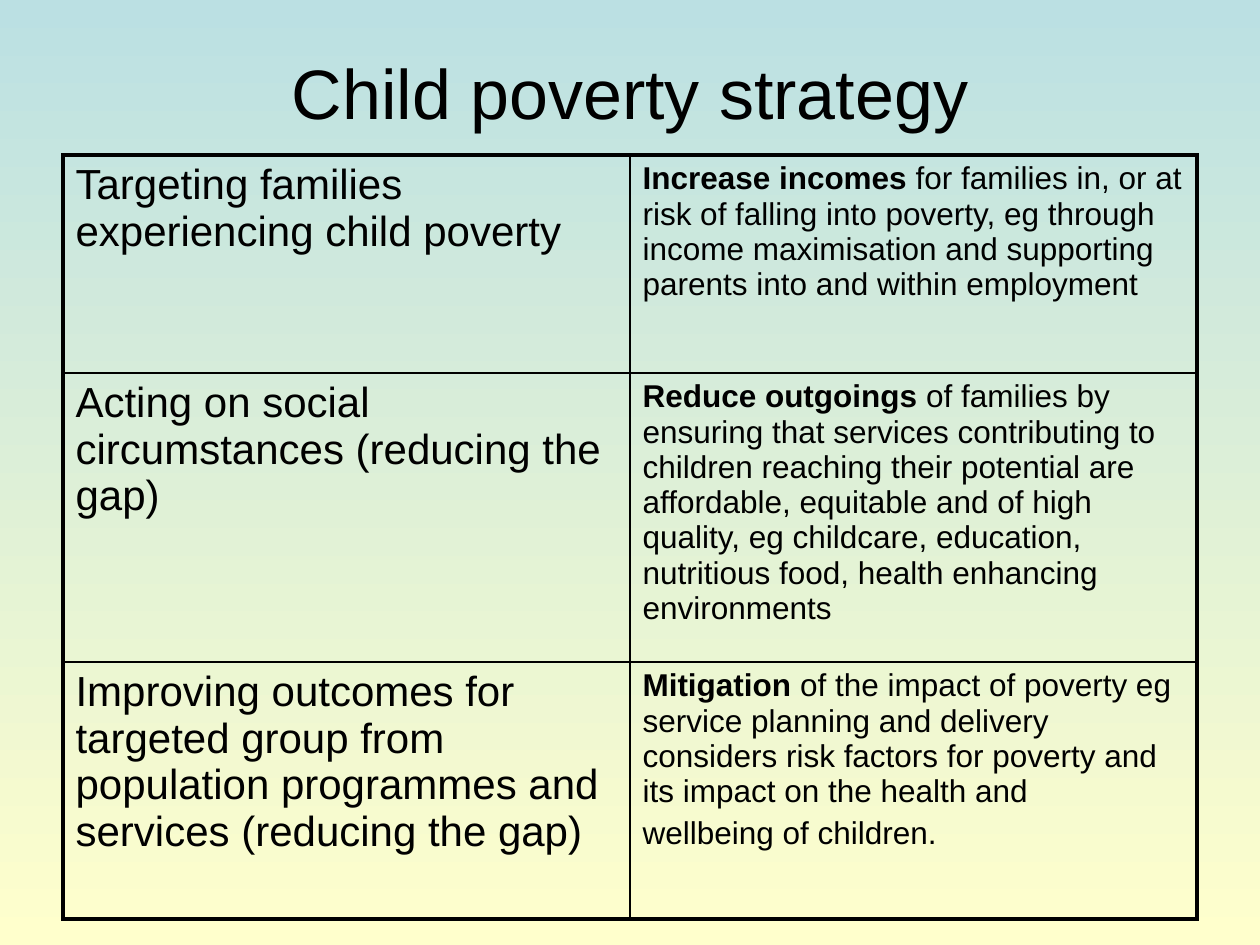
from dataclasses import dataclass

from lxml import etree
from pptx import Presentation
from pptx.dml.color import RGBColor
from pptx.enum.text import MSO_ANCHOR, PP_ALIGN
from pptx.oxml.ns import qn
from pptx.util import Emu, Pt

CENTER, LEFT, MIDDLE = PP_ALIGN.CENTER, PP_ALIGN.LEFT, MSO_ANCHOR.MIDDLE
PX_PER_INCH = 126
BLANK_LAYOUT = 6


@dataclass(frozen=True)
class Theme:
    font: str = "Arial"
    ink: str = "000000"
    sky: str = "BBE0E3"
    cream: str = "FFFFCC"
    title_size: int = 40
    aim_size: int = 24
    action_size: int = 18
    outer_line: float = 2.25
    inner_line: float = 1
    paragraph_gap: float = 0.2


THEME = Theme()
ROW_HEIGHTS = [218, 289, 257]
STRATEGY = [
    (
        "Targeting families experiencing child poverty",
        "Increase incomes",
        [" for families in, or at risk of falling into poverty, eg through income "
         "maximisation and supporting parents into and within employment"],
    ),
    (
        "Acting on social circumstances (reducing the gap)",
        "Reduce outgoings",
        [" of families by ensuring that services contributing to children reaching "
         "their potential are affordable, equitable and of high quality, eg childcare, "
         "education, nutritious food, health enhancing environments"],
    ),
    (
        "Improving outcomes for targeted group from population programmes and "
        "services (reducing the gap)",
        "Mitigation",
        [" of the impact of poverty eg service planning and delivery considers risk "
         "factors for poverty and its impact on the health and",
         "wellbeing of children."],
    ),
]


def px(length):
    return Emu(round(length * 914400 / PX_PER_INCH))


def apply_format(target, values):
    for name, value in values.items():
        setattr(target, name, value)


def write_text(text_frame, paragraphs, size, alignment=LEFT):
    text_frame.word_wrap = True
    for index, runs in enumerate(paragraphs):
        paragraph = text_frame.add_paragraph() if index else text_frame.paragraphs[0]
        paragraph.alignment = alignment
        if index:
            paragraph.space_before = Pt(size * THEME.paragraph_gap)
        for text, bold in runs:
            run = paragraph.add_run()
            run.text = text
            apply_format(run.font, {"name": THEME.font, "size": Pt(size), "bold": bold})
            run.font.color.rgb = RGBColor.from_string(THEME.ink)


def set_borders(cell, widths):
    properties = cell._tc.get_or_add_tcPr()
    for index, (side, width) in enumerate(widths.items()):
        line = etree.Element(qn(f"a:ln{side}"), w=str(Pt(width)))
        fill = etree.SubElement(line, qn("a:solidFill"))
        etree.SubElement(fill, qn("a:srgbClr"), val=THEME.ink)
        properties.insert(index, line)


def paint_background(slide):
    fill = slide.background.fill
    fill.gradient()
    fill.gradient_angle = 270
    stops = zip(fill.gradient_stops, (THEME.sky, THEME.cream), (0, 1))
    for stop, color, position in stops:
        stop.color.rgb = RGBColor.from_string(color)
        stop.position = position


def add_title(slide, box, text):
    shape = slide.shapes.add_textbox(*map(px, box))
    shape.text_frame.vertical_anchor = MIDDLE
    write_text(shape.text_frame, [[(text, False)]], THEME.title_size, CENTER)


def add_strategy_table(slide, box, row_heights, strategy):
    row_count, column_count = len(strategy), 2
    table = slide.shapes.add_table(row_count, column_count, *map(px, box)).table
    apply_format(table, {"first_row": False, "horz_banding": False})
    for column in table.columns:
        column.width = px(box[2] // column_count)
    for row, height in zip(table.rows, row_heights):
        row.height = px(height)

    for row_index, (aim, lead, details) in enumerate(strategy):
        action = [[(detail, False)] for detail in details]
        action[0].insert(0, (lead, True))
        contents = [([[(aim, False)]], THEME.aim_size), (action, THEME.action_size)]
        for column_index, (paragraphs, size) in enumerate(contents):
            cell = table.cell(row_index, column_index)
            write_text(cell.text_frame, paragraphs, size)
            cell.fill.background()
            on_edge = {
                "L": column_index == 0,
                "R": column_index == column_count - 1,
                "T": row_index == 0,
                "B": row_index == row_count - 1,
            }
            set_borders(cell, {
                side: THEME.outer_line if outer else THEME.inner_line
                for side, outer in on_edge.items()
            })


def main():
    presentation = Presentation()
    apply_format(presentation, {"slide_width": px(1260), "slide_height": px(945)})
    slide = presentation.slides.add_slide(presentation.slide_layouts[BLANK_LAYOUT])
    paint_background(slide)
    add_title(slide, (63, 38, 1134, 107), "Child poverty strategy")
    add_strategy_table(slide, (63, 155, 1134, sum(ROW_HEIGHTS)), ROW_HEIGHTS, STRATEGY)
    presentation.save("out.pptx")


if __name__ == "__main__":
    main()
